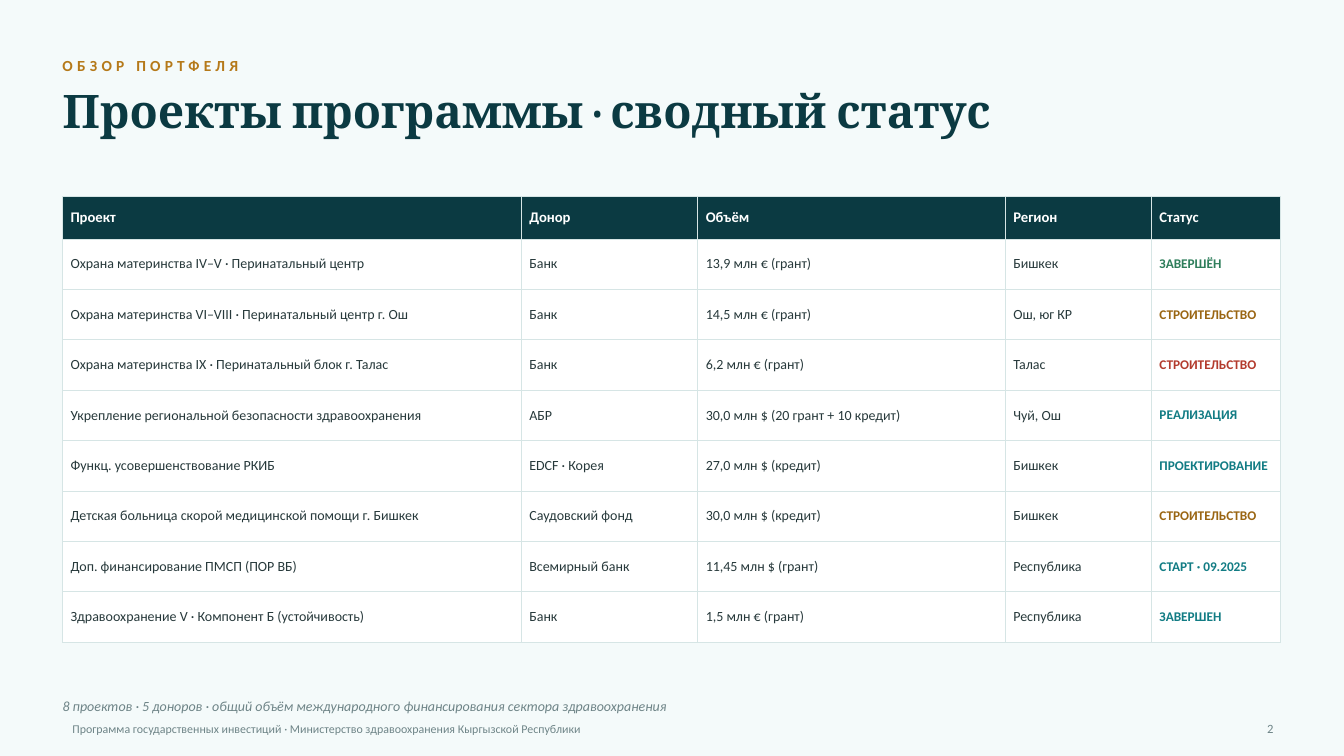
from dataclasses import dataclass
from lxml.etree import SubElement
from pptx import Presentation
from pptx.dml.color import RGBColor
from pptx.enum.text import MSO_ANCHOR, MSO_AUTO_SIZE, PP_ALIGN
from pptx.oxml.ns import qn
from pptx.util import Inches, Pt

DARK, INK, GREY, WHITE = "0B3A42", "27393B", "6E8487", "FFFFFF"
GREEN, AMBER, RED, TEAL = "2E7E5B", "9A6512", "B33B2D", "127C84"
EDGE = "D6E5E5"
LEFT = 0.62


@dataclass
class Style:
    """Look of one run of text."""
    size: float
    color: str
    bold: bool = False
    italic: bool = False
    font: str = "Calibri"
    track: int = 0


@dataclass
class Label:
    """Text with its place, look and margins."""
    text: str
    box: tuple[float, float, float, float]
    style: Style
    align: PP_ALIGN = PP_ALIGN.LEFT
    anchor: MSO_ANCHOR = MSO_ANCHOR.MIDDLE
    pad: tuple[float, float] = (0, 0)


@dataclass
class Project:
    """One row of the project table."""
    name: str
    donor: str
    sum: str
    region: str
    status: str
    color: str


TITLE = Label("Проекты программы · сводный статус", (LEFT, 0.82, 11.5, 0.85),
              Style(33, DARK, bold=True, font="Cambria"), anchor=MSO_ANCHOR.TOP)
LABELS = [
    Label("ОБЗОР ПОРТФЕЛЯ", (LEFT, 0.5, 11.5, 0.3),
          Style(11, "B57919", bold=True, track=300)),
    Label("8 проектов · 5 доноров · общий объём международного финансирования "
          "сектора здравоохранения", (LEFT, 6.85, 12.09, 0.3),
          Style(10, GREY, italic=True)),
    Label("Программа государственных инвестиций · Министерство здравоохранения "
          "Кыргызской Республики", (LEFT, 7.08, 10.5, 0.3),
          Style(8.5, GREY), pad=(0.1, 0.05)),
    Label("2", (12.23, 7.08, 0.5, 0.3), Style(9, GREY),
          align=PP_ALIGN.RIGHT, pad=(0.1, 0.05)),
]
HEADS = ["Проект", "Донор", "Объём", "Регион", "Статус"]
WIDTHS = [4.55, 1.75, 3.05, 1.45, 1.28]
HEAD_H, ROW_H = 0.42, 0.5
PROJECTS = [
    Project("Охрана материнства IV–V · Перинатальный центр", "Банк",
            "13,9 млн € (грант)", "Бишкек", "ЗАВЕРШЁН", GREEN),
    Project("Охрана материнства VI–VIII · Перинатальный центр г. Ош", "Банк",
            "14,5 млн € (грант)", "Ош, юг КР", "СТРОИТЕЛЬСТВО", AMBER),
    Project("Охрана материнства IX · Перинатальный блок г. Талас", "Банк",
            "6,2 млн € (грант)", "Талас", "СТРОИТЕЛЬСТВО", RED),
    Project("Укрепление региональной безопасности здравоохранения", "АБР",
            "30,0 млн $ (20 грант + 10 кредит)", "Чуй, Ош", "РЕАЛИЗАЦИЯ", TEAL),
    Project("Функц. усовершенствование РКИБ", "EDCF · Корея",
            "27,0 млн $ (кредит)", "Бишкек", "ПРОЕКТИРОВАНИЕ", TEAL),
    Project("Детская больница скорой медицинской помощи г. Бишкек",
            "Саудовский фонд", "30,0 млн $ (кредит)", "Бишкек",
            "СТРОИТЕЛЬСТВО", AMBER),
    Project("Доп. финансирование ПМСП (ПОР ВБ)", "Всемирный банк",
            "11,45 млн $ (грант)", "Республика", "СТАРТ · 09.2025", TEAL),
    Project("Здравоохранение V · Компонент Б (устойчивость)", "Банк",
            "1,5 млн € (грант)", "Республика", "ЗАВЕРШЕН", TEAL),
]


def paint(target, color: str) -> None:
    """Set a fill to a solid hex colour."""
    target.solid()
    target.fore_color.rgb = RGBColor.from_string(color)


def write(para, text: str, style: Style) -> None:
    """Add one styled run to a paragraph."""
    run = para.add_run()
    run.text = text
    font = run.font
    font.name, font.size = style.font, Pt(style.size)
    font.bold, font.italic = style.bold, style.italic
    paint(font.fill, style.color)
    if style.track:
        run._r.get_or_add_rPr().set("spc", str(style.track))


def place(shape, label: Label) -> None:
    """Move a text shape and fill it from a label."""
    shape.left, shape.top, shape.width, shape.height = map(Inches, label.box)
    frame = shape.text_frame
    frame.word_wrap = True
    frame.auto_size = MSO_AUTO_SIZE.NONE
    frame.vertical_anchor = label.anchor
    side, end = map(Inches, label.pad)
    frame.margin_left = frame.margin_right = side
    frame.margin_top = frame.margin_bottom = end
    para = frame.paragraphs[0]
    para.alignment = label.align
    write(para, label.text, label.style)


def edge(cell) -> None:
    """Draw thin lines on all four sides of a cell."""
    props = cell._tc.get_or_add_tcPr()
    for tag in ("a:lnL", "a:lnR", "a:lnT", "a:lnB"):
        line = SubElement(props, qn(tag), w=str(Pt(0.5)))
        fill = SubElement(line, qn("a:solidFill"))
        SubElement(fill, qn("a:srgbClr"), val=EDGE)


def fill_cell(cell, text: str, style: Style, back: str) -> None:
    """Write and format one table cell."""
    edge(cell)
    paint(cell.fill, back)
    cell.vertical_anchor = MSO_ANCHOR.MIDDLE
    cell.margin_left = cell.margin_right = Inches(0.08)
    cell.margin_top = cell.margin_bottom = Inches(0.04)
    write(cell.text_frame.paragraphs[0], text, style)


def add_grid(slide) -> None:
    """Add the table of projects."""
    count = len(PROJECTS)
    box = (LEFT, 1.95, sum(WIDTHS), HEAD_H + ROW_H * count)
    table = slide.shapes.add_table(
        count + 1, len(HEADS), *map(Inches, box)).table
    table.horz_banding = False
    for col, width in zip(table.columns, WIDTHS):
        col.width = Inches(width)
    for index, row in enumerate(table.rows):
        row.height = Inches(ROW_H if index else HEAD_H)
    for col, head in enumerate(HEADS):
        fill_cell(table.cell(0, col), head, Style(10.5, WHITE, bold=True), DARK)
    for row, item in enumerate(PROJECTS, 1):
        facts = (item.name, item.donor, item.sum, item.region)
        for col, fact in enumerate(facts):
            fill_cell(table.cell(row, col), fact, Style(10, INK), WHITE)
        fill_cell(table.cell(row, len(facts)), item.status,
                  Style(9.5, item.color, bold=True), WHITE)


def main() -> None:
    """Build and save the slide."""
    deck = Presentation()
    deck.slide_width, deck.slide_height = Inches(13.33), Inches(7.5)
    slide = deck.slides.add_slide(deck.slide_layouts[5])
    paint(slide.background.fill, "F4FAFA")
    place(slide.shapes.title, TITLE)
    add_grid(slide)
    for label in LABELS:
        place(slide.shapes.add_textbox(0, 0, 0, 0), label)
    deck.save("out.pptx")


if __name__ == "__main__":
    main()
